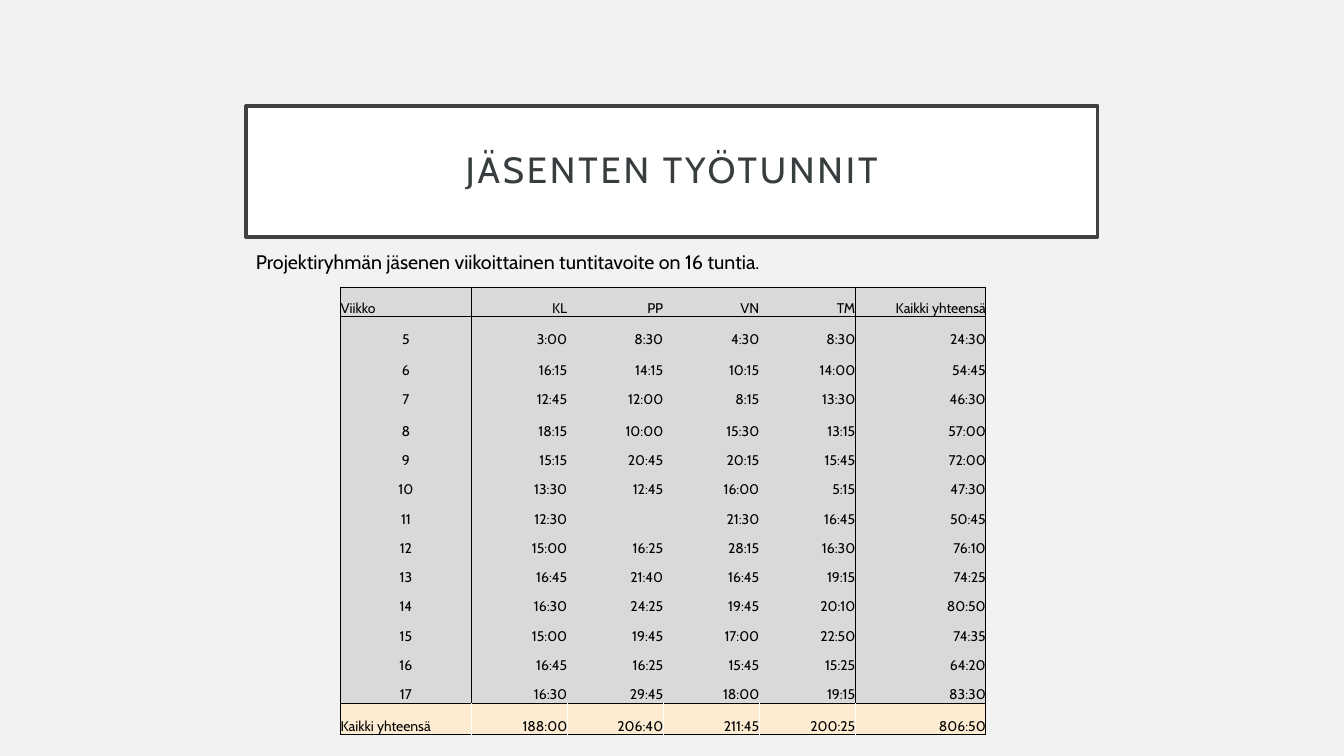
from dataclasses import dataclass

from lxml.etree import SubElement
from pptx import Presentation
from pptx.dml.color import RGBColor
from pptx.enum.text import MSO_ANCHOR as Anchor, MSO_AUTO_SIZE as AutoSize, PP_ALIGN as Align
from pptx.oxml.ns import qn
from pptx.util import Inches, Pt

SLIDE_WIDTH, SLIDE_HEIGHT = Inches(13.33), Inches(7.5)
GRID_COLUMNS, GRID_ROWS = 160, 90


@dataclass(frozen=True)
class Theme:
    """Colours, font and type sizes of the slide."""
    font: str = "Cabin"
    background: str = "F2F2F2"
    white: str = "FFFFFF"
    black: str = "000000"
    title_text: str = "383E40"
    title_line: str = "404040"
    body_fill: str = "D9D9D9"
    total_fill: str = "FDECD2"
    title_size: float = 26
    note_size: float = 14
    table_size: float = 10
    title_line_width: float = 2.5
    border_width: float = 1


@dataclass(frozen=True)
class Box:
    """A rectangle given in grid columns and rows."""
    column: float
    row: float
    columns: float
    rows: float

    def frame(self):
        """Return left, top, width and height as slide lengths."""
        across, down = SLIDE_WIDTH / GRID_COLUMNS, SLIDE_HEIGHT / GRID_ROWS
        return (int(self.column * across), int(self.row * down),
                int(self.columns * across), int(self.rows * down))


THEME = Theme()
TITLE_BOX = Box(29.28, 12.6, 101.4, 15.6)
NOTE_BOX = Box(29.28, 29.16, 91.08, 4.08)
TABLE_BOX = Box(40.56, 34.2, 76.8, 53.28)

TOTAL = "Kaikki yhteensä"
HOURS = [
    ("Viikko", "KL", "PP", "VN", "TM", TOTAL),
    ("5", "3:00", "8:30", "4:30", "8:30", "24:30"),
    ("6", "16:15", "14:15", "10:15", "14:00", "54:45"),
    ("7", "12:45", "12:00", "8:15", "13:30", "46:30"),
    ("8", "18:15", "10:00", "15:30", "13:15", "57:00"),
    ("9", "15:15", "20:45", "20:15", "15:45", "72:00"),
    ("10", "13:30", "12:45", "16:00", "5:15", "47:30"),
    ("11", "12:30", "", "21:30", "16:45", "50:45"),
    ("12", "15:00", "16:25", "28:15", "16:30", "76:10"),
    ("13", "16:45", "21:40", "16:45", "19:15", "74:25"),
    ("14", "16:30", "24:25", "19:45", "20:10", "80:50"),
    ("15", "15:00", "19:45", "17:00", "22:50", "74:35"),
    ("16", "16:45", "16:25", "15:45", "15:25", "64:20"),
    ("17", "16:30", "29:45", "18:00", "19:15", "83:30"),
    (TOTAL, "188:00", "206:40", "211:45", "200:25", "806:50"),
]
LAST_ROW, LAST_COLUMN = len(HOURS) - 1, len(HOURS[0]) - 1
TALL_ROWS = {1, 2, 4, LAST_ROW}
COLUMN_WEIGHTS = [129, 95, 95, 95, 95, 129]
ROW_WEIGHTS = [31 if row in TALL_ROWS else 29 for row in range(len(HOURS))]
RULED_COLUMNS = {0, 1, LAST_COLUMN, LAST_COLUMN + 1}
RULED_ROWS = {0, 1, LAST_ROW, LAST_ROW + 1}


def write_text(frame, text, *, size, color=THEME.black, align=Align.LEFT,
               line_spacing=None, tracking=None):
    """Write one formatted paragraph into a text frame."""
    paragraph = frame.paragraphs[0]
    paragraph.alignment = align
    if line_spacing:
        paragraph.line_spacing = line_spacing
    if not text:
        SubElement(paragraph._p, qn("a:endParaRPr"), sz=str(int(size * 100)))
        return
    run = paragraph.add_run()
    run.text = text
    run.font.name = THEME.font
    run.font.size = Pt(size)
    run.font.color.rgb = RGBColor.from_string(color)
    if tracking:
        run.font._element.set("spc", str(int(tracking * 100)))


def add_title(slide, box):
    """Place the framed slide title."""
    title = slide.shapes.title
    title.left, title.top, title.width, title.height = box.frame()
    title.fill.solid()
    title.fill.fore_color.rgb = RGBColor.from_string(THEME.white)
    title.line.color.rgb = RGBColor.from_string(THEME.title_line)
    title.line.width = Pt(THEME.title_line_width)
    frame = title.text_frame
    frame.word_wrap, frame.auto_size = True, AutoSize.NONE
    frame.vertical_anchor = Anchor.MIDDLE
    frame.margin_left = frame.margin_right = Inches(0.2)
    frame.margin_top = frame.margin_bottom = Inches(0.2)
    write_text(frame, "JÄSENTEN TYÖTUNNIT", size=THEME.title_size, color=THEME.title_text,
               align=Align.CENTER, line_spacing=0.9, tracking=2)


def add_note(slide, box):
    """Place the sentence about the weekly target."""
    frame = slide.shapes.add_textbox(*box.frame()).text_frame
    frame.word_wrap, frame.auto_size = True, AutoSize.SHAPE_TO_FIT_TEXT
    write_text(frame, "Projektiryhmän jäsenen viikoittainen tuntitavoite on 16 tuntia.",
               size=THEME.note_size)


def vertical_rule(row, edge):
    """Return the colour of a column edge in a row, or None."""
    if row == LAST_ROW and 0 < edge <= LAST_COLUMN:
        return THEME.white
    return THEME.black if edge in RULED_COLUMNS else None


def horizontal_rule(edge):
    """Return the colour of a row edge, or None."""
    return THEME.black if edge in RULED_ROWS else None


def set_borders(cell, row, column):
    """Draw the four borders of a cell before its fill is set."""
    borders = {"a:lnL": vertical_rule(row, column), "a:lnR": vertical_rule(row, column + 1),
               "a:lnT": horizontal_rule(row), "a:lnB": horizontal_rule(row + 1)}
    properties = cell._tc.get_or_add_tcPr()
    for tag, color in borders.items():
        line = SubElement(properties, qn(tag), w=str(Pt(THEME.border_width)))
        if color:
            SubElement(SubElement(line, qn("a:solidFill")), qn("a:srgbClr"), val=color)
        else:
            SubElement(line, qn("a:noFill"))


def cell_alignment(row, column):
    """Centre week numbers, right-align hours and left-align row labels."""
    if column:
        return Align.RIGHT
    return Align.CENTER if 0 < row < LAST_ROW else Align.LEFT


def add_hours_table(slide, box):
    """Place the table of working hours per week and member."""
    left, top, width, height = box.frame()
    table = slide.shapes.add_table(len(HOURS), len(HOURS[0]), left, top, width, height).table
    for column, weight in zip(table.columns, COLUMN_WEIGHTS):
        column.width = int(width * weight / sum(COLUMN_WEIGHTS))
    for row, weight in zip(table.rows, ROW_WEIGHTS):
        row.height = int(height * weight / sum(ROW_WEIGHTS))
    for row, values in enumerate(HOURS):
        fill = THEME.total_fill if row == LAST_ROW else THEME.body_fill
        for column, value in enumerate(values):
            cell = table.cell(row, column)
            cell.margin_left = cell.margin_right = cell.margin_top = cell.margin_bottom = 0
            cell.vertical_anchor = Anchor.BOTTOM
            set_borders(cell, row, column)
            cell.fill.solid()
            cell.fill.fore_color.rgb = RGBColor.from_string(fill)
            write_text(cell.text_frame, value, size=THEME.table_size,
                       align=cell_alignment(row, column))
            for run in cell.text_frame.paragraphs[0].runs:
                run.font.bold = False


def add_hours_slide(presentation):
    """Add the slide with title, note and table."""
    slide = presentation.slides.add_slide(presentation.slide_layouts[5])
    slide.background.fill.solid()
    slide.background.fill.fore_color.rgb = RGBColor.from_string(THEME.background)
    add_title(slide, TITLE_BOX)
    add_note(slide, NOTE_BOX)
    add_hours_table(slide, TABLE_BOX)


def main():
    """Build and save the presentation."""
    presentation = Presentation()
    presentation.slide_width, presentation.slide_height = SLIDE_WIDTH, SLIDE_HEIGHT
    add_hours_slide(presentation)
    presentation.save("out.pptx")


if __name__ == "__main__":
    main()
